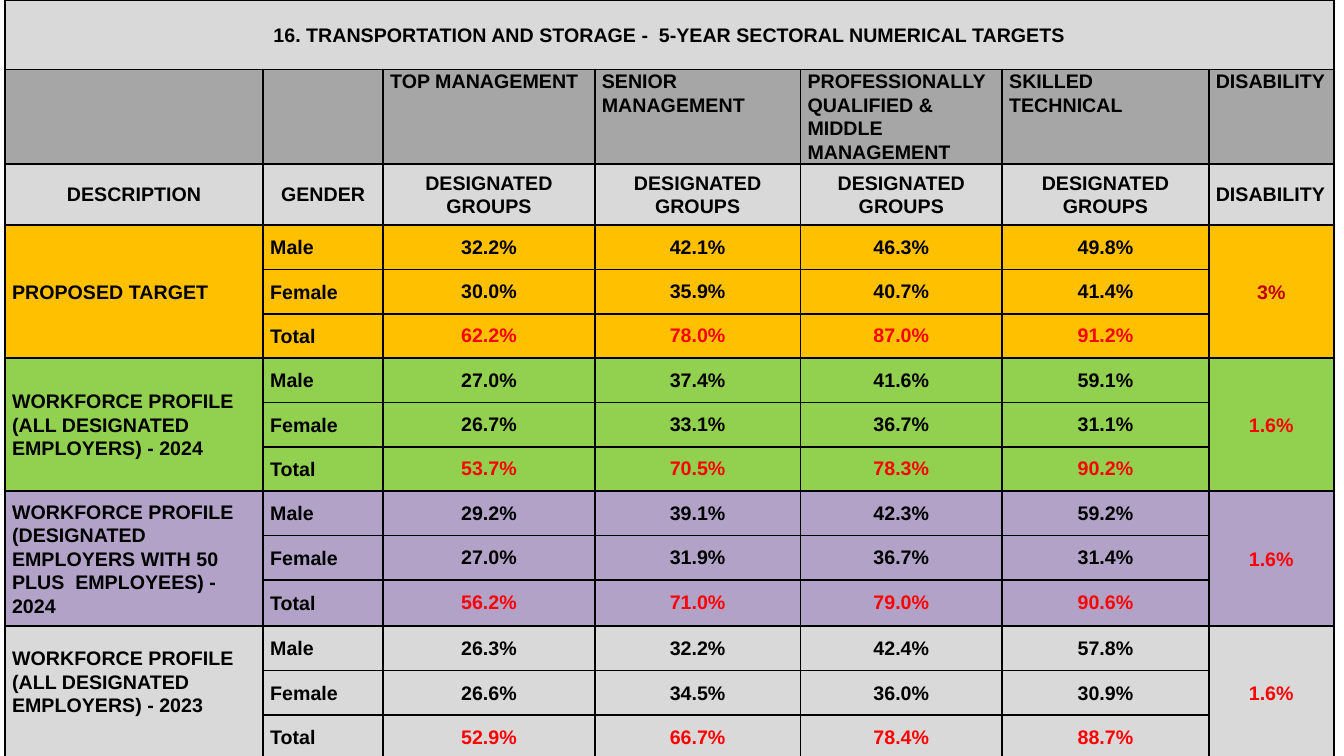
"""Build a slide with the transport sector's five-year numerical targets table."""
from lxml.etree import SubElement
from pptx import Presentation
from pptx.dml.color import RGBColor
from pptx.enum.text import MSO_ANCHOR, PP_ALIGN
from pptx.oxml.ns import qn
from pptx.util import Inches, Pt

BLACK = RGBColor(0x00, 0x00, 0x00)
RED = RGBColor(0xFF, 0x00, 0x00)
DARK_RED = RGBColor(0xC0, 0x00, 0x00)
LIGHT_GREY = RGBColor(0xD9, 0xD9, 0xD9)
MID_GREY = RGBColor(0xA6, 0xA6, 0xA6)
AMBER = RGBColor(0xFF, 0xC0, 0x00)
GREEN = RGBColor(0x92, 0xD0, 0x50)
PURPLE = RGBColor(0xB3, 0xA2, 0xC7)

TITLE = "16. TRANSPORTATION AND STORAGE -  5-YEAR SECTORAL NUMERICAL TARGETS"
LEVELS = ["", "", "TOP MANAGEMENT", "SENIOR MANAGEMENT",
          "PROFESSIONALLY QUALIFIED & MIDDLE MANAGEMENT", "SKILLED TECHNICAL", "DISABILITY"]
HEADINGS = ["DESCRIPTION", "GENDER"] + ["DESIGNATED GROUPS"] * 4 + ["DISABILITY"]
GENDERS = ["Male", "Female", "Total"]
GROUPS = [
    ("PROPOSED TARGET", AMBER, "3%", DARK_RED,
     [("32.2%", "42.1%", "46.3%", "49.8%"),
      ("30.0%", "35.9%", "40.7%", "41.4%"),
      ("62.2%", "78.0%", "87.0%", "91.2%")]),
    ("WORKFORCE PROFILE (ALL DESIGNATED EMPLOYERS) - 2024", GREEN, "1.6%", RED,
     [("27.0%", "37.4%", "41.6%", "59.1%"),
      ("26.7%", "33.1%", "36.7%", "31.1%"),
      ("53.7%", "70.5%", "78.3%", "90.2%")]),
    ("WORKFORCE PROFILE (DESIGNATED EMPLOYERS WITH 50 PLUS  EMPLOYEES) - 2024", PURPLE, "1.6%", RED,
     [("29.2%", "39.1%", "42.3%", "59.2%"),
      ("27.0%", "31.9%", "36.7%", "31.4%"),
      ("56.2%", "71.0%", "79.0%", "90.6%")]),
    ("WORKFORCE PROFILE (ALL DESIGNATED EMPLOYERS) - 2023", LIGHT_GREY, "1.6%", RED,
     [("26.3%", "32.2%", "42.4%", "57.8%"),
      ("26.6%", "34.5%", "36.0%", "30.9%"),
      ("52.9%", "66.7%", "78.4%", "88.7%")]),
]
COLUMN_WIDTHS = [2.56, 1.19, 2.1, 2.04, 2, 2.05, 1.24]
ROW_HEIGHTS = [0.69, 0.9, 0.61] + [0.44] * 8 + [0.46] + [0.44] * 3
FIRST_GROUP_ROW = 3
LAST_COLUMN = len(COLUMN_WIDTHS) - 1


def style_cell(cell, fill):
    """Give a cell its black border and solid fill."""
    properties = cell._tc.get_or_add_tcPr()
    for side in ("a:lnL", "a:lnR", "a:lnT", "a:lnB"):
        line = SubElement(properties, qn(side), w=str(Pt(1.5)))
        SubElement(SubElement(line, qn("a:solidFill")), qn("a:srgbClr"), val=str(BLACK))
    cell.fill.solid()
    cell.fill.fore_color.rgb = fill


def write_cell(cell, text, color=BLACK, align=PP_ALIGN.LEFT, anchor=MSO_ANCHOR.MIDDLE,
               inset=0.07, spacing=1.07):
    """Write bold text into a cell."""
    cell.text = text
    cell.vertical_anchor = anchor
    cell.margin_left = cell.margin_right = Inches(inset)
    cell.margin_top = cell.margin_bottom = 0
    para = cell.text_frame.paragraphs[0]
    para.alignment = align
    para.line_spacing = spacing
    para.font.name = "Arial"
    para.font.size = Pt(14)
    para.font.bold = True
    para.font.color.rgb = color


def fill_headings(table):
    """Write the title row and the two heading rows."""
    table.cell(0, 0).merge(table.cell(0, LAST_COLUMN))
    write_cell(table.cell(0, 0), TITLE, align=PP_ALIGN.CENTER)
    for column, (level, heading) in enumerate(zip(LEVELS, HEADINGS)):
        write_cell(table.cell(1, column), level, anchor=MSO_ANCHOR.TOP)
        align = PP_ALIGN.LEFT if column == LAST_COLUMN else PP_ALIGN.CENTER
        write_cell(table.cell(2, column), heading, align=align)


def fill_group(table, top, group):
    """Write one description with its gender rows and disability share."""
    description, _, disability, disability_color, figures = group
    bottom = top + len(GENDERS) - 1
    for column in (0, LAST_COLUMN):
        table.cell(top, column).merge(table.cell(bottom, column))
    write_cell(table.cell(top, 0), description)
    write_cell(table.cell(top, LAST_COLUMN), disability, disability_color, PP_ALIGN.CENTER)
    inset, spacing = (0.07, 1.07) if group is GROUPS[-1] else (0.01, 1.0)
    for row, (gender, values) in enumerate(zip(GENDERS, figures), top):
        write_cell(table.cell(row, 1), gender)
        color = RED if gender == "Total" else BLACK
        for column, value in enumerate(values, 2):
            write_cell(table.cell(row, column), value, color, PP_ALIGN.CENTER,
                       inset=inset, spacing=spacing)


def main():
    """Create the deck and save it."""
    deck = Presentation()
    deck.slide_width, deck.slide_height = Inches(13.33), Inches(7.5)
    page = deck.slides.add_slide(deck.slide_layouts[6])
    table = page.shapes.add_table(
        len(ROW_HEIGHTS), len(COLUMN_WIDTHS), Inches(0.05), 0,
        Inches(sum(COLUMN_WIDTHS)), Inches(sum(ROW_HEIGHTS))).table
    table.first_row = table.horz_banding = False
    for column, width in zip(table.columns, COLUMN_WIDTHS):
        column.width = Inches(width)
    fills = [LIGHT_GREY, MID_GREY, LIGHT_GREY] + [group[1] for group in GROUPS for _ in GENDERS]
    for row, height, fill in zip(table.rows, ROW_HEIGHTS, fills):
        row.height = Inches(height)
        for cell in row.cells:
            style_cell(cell, fill)
    fill_headings(table)
    for index, group in enumerate(GROUPS):
        fill_group(table, FIRST_GROUP_ROW + index * len(GENDERS), group)
    last_description = table.cell(len(ROW_HEIGHTS) - len(GENDERS), 0)
    last_description.margin_bottom = Inches(0.22)
    deck.save("out.pptx")


if __name__ == "__main__":
    main()
